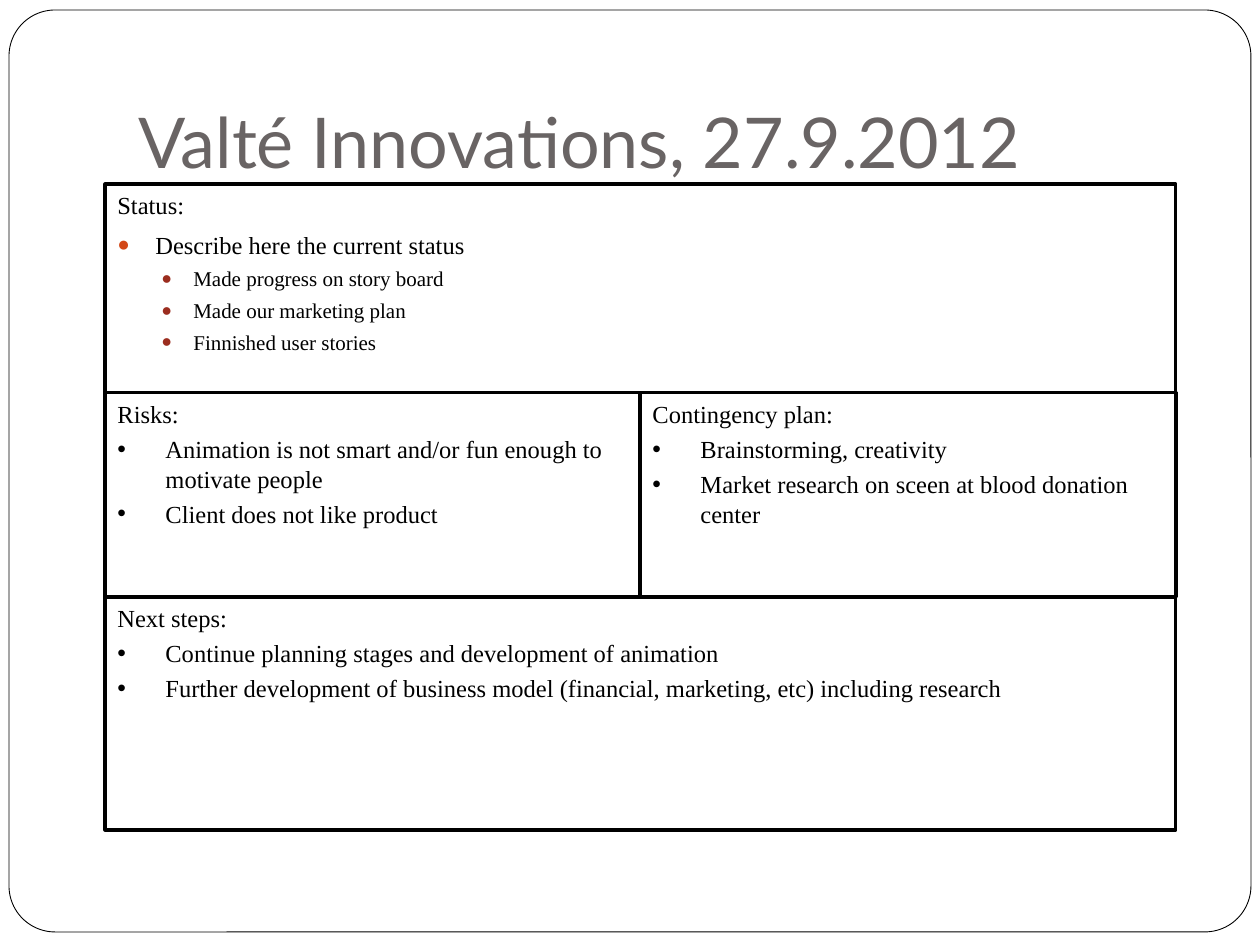
import lxml.etree
import pptx
import pptx.dml.color
import pptx.enum.shapes
import pptx.enum.text
import pptx.oxml.ns
import pptx.util

PX = 914400 / 126
COLORS = {"black": "000000", "white": "FFFFFF", "title": "696464",
          "bullet": "D34817", "sub_bullet": "9B2D1F"}
HEADING = {"size": 14, "margin": 48, "hang": 48, "before": 3.2}
ITEM = {**HEADING, "char": "•"}
STATUS_HEADING = {"size": 14, "margin": 38, "hang": 38, "before": 5.8}
STATUS_ITEM = {**STATUS_HEADING, "char": "●", "color": "bullet", "scale": 85}
STATUS_SUB = {"size": 12, "margin": 76, "hang": 32, "before": 3.7,
              "char": "●", "color": "sub_bullet", "scale": 85, "level": 1}


def emu(px):
    """Turn px into EMU."""
    return pptx.util.Emu(round(px * PX))


def rgb(name):
    """Look up a named colour."""
    return pptx.dml.color.RGBColor.from_string(COLORS[name])


def add_box(s, kind, box, width):
    """Add a black-outlined shape without shadow."""
    sp = s.shapes.add_shape(kind, *map(emu, box))
    sp.shadow.inherit = False
    sp.line.color.rgb = rgb("black")
    sp.line.width = pptx.util.Pt(width)
    return sp


def format_run(p, font, size, color):
    """Format the runs of a paragraph."""
    for r in p.runs:
        r.font.name = font
        r.font.size = pptx.util.Pt(size)
        r.font.color.rgb = rgb(color)


def set_bullet(p, style):
    """Set the hanging indent and the bullet of a paragraph."""
    qn = pptx.oxml.ns.qn
    pPr = p._p.get_or_add_pPr()
    pPr.set("marL", str(emu(style["margin"])))
    pPr.set("indent", str(-emu(style["hang"])))
    if "char" not in style:
        lxml.etree.SubElement(pPr, qn("a:buNone"))
        return
    if "color" in style:
        clr = lxml.etree.SubElement(pPr, qn("a:buClr"))
        lxml.etree.SubElement(clr, qn("a:srgbClr"), val=COLORS[style["color"]])
    if "scale" in style:
        lxml.etree.SubElement(pPr, qn("a:buSzPct"), val=str(style["scale"] * 1000))
    lxml.etree.SubElement(pPr, qn("a:buFont"), typeface="Arial")
    lxml.etree.SubElement(pPr, qn("a:buChar"), char=style["char"])


def add_panel(s, box, lines):
    """Add an outlined panel holding styled lines of text."""
    sp = add_box(s, pptx.enum.shapes.MSO_SHAPE.RECTANGLE, box, 1.75)
    sp.fill.background()
    tf = sp.text_frame
    tf.word_wrap = True
    tf.vertical_anchor = pptx.enum.text.MSO_ANCHOR.TOP
    for i, (text, style) in enumerate(lines):
        p = tf.add_paragraph() if i else tf.paragraphs[0]
        p.text = text
        p.level = style.get("level", 0)
        p.alignment = pptx.enum.text.PP_ALIGN.LEFT
        p.space_before = pptx.util.Pt(style["before"])
        set_bullet(p, style)
        format_run(p, "Times New Roman", style["size"], "black")


def add_list_panel(s, box, heading, items):
    """Add a panel with a heading above bulleted items."""
    add_panel(s, box, [(heading, HEADING)] + [(item, ITEM) for item in items])


def add_frame(s, box):
    """Add the rounded frame behind the title."""
    sp = add_box(s, pptx.enum.shapes.MSO_SHAPE.ROUNDED_RECTANGLE, box, 0.5)
    sp.adjustments[0] = 0.05
    sp.fill.solid()
    sp.fill.fore_color.rgb = rgb("white")
    s.shapes.title.element.addprevious(sp.element)


def set_title(s, box, text):
    """Place and format the title placeholder."""
    sp = s.shapes.title
    sp.left, sp.top, sp.width, sp.height = map(emu, box)
    tf = sp.text_frame
    tf.text = text
    tf.word_wrap = True
    tf.auto_size = pptx.enum.text.MSO_AUTO_SIZE.NONE
    tf.vertical_anchor = pptx.enum.text.MSO_ANCHOR.BOTTOM
    tf.margin_bottom = pptx.util.Inches(0.1)
    p = tf.paragraphs[0]
    p.alignment = pptx.enum.text.PP_ALIGN.LEFT
    format_run(p, "Lato", 40, "title")


def add_report(s, box):
    """Stack the status, risk, contingency and next-step panels."""
    x, y, w, h = box
    status_h, middle_h = 209, 204
    half = w // 2
    middle_y = y + status_h
    next_y = middle_y + middle_h
    add_panel(s, (x, y, w, status_h), [
        ("Status:", STATUS_HEADING),
        ("Describe here the current status", STATUS_ITEM),
        ("Made progress on story board", STATUS_SUB),
        ("Made our marketing plan", STATUS_SUB),
        ("Finnished user stories", STATUS_SUB)])
    add_list_panel(s, (x, next_y, w, y + h - next_y), "Next steps:", [
        "Continue planning stages and development of animation",
        "Further development of business model (financial, marketing, etc) including research"])
    add_list_panel(s, (x, middle_y, half, middle_h), "Risks:", [
        "Animation is not smart and/or fun enough to motivate people",
        "Client does not like product"])
    add_list_panel(s, (x + half, middle_y, w - half, middle_h), "Contingency plan:", [
        "Brainstorming, creativity",
        "Market research on sceen at blood donation center"])


def main():
    """Build and save the status report slide."""
    prs = pptx.Presentation()
    prs.slide_width, prs.slide_height = emu(1260), emu(945)
    s = prs.slides.add_slide(prs.slide_layouts[5])
    set_title(s, (126, 38, 1071, 157), "Valté Innovations, 27.9.2012")
    add_frame(s, (9, 10, 1242, 922))
    add_report(s, (105, 184, 1071, 646))
    prs.save("out.pptx")


if __name__ == "__main__":
    main()
